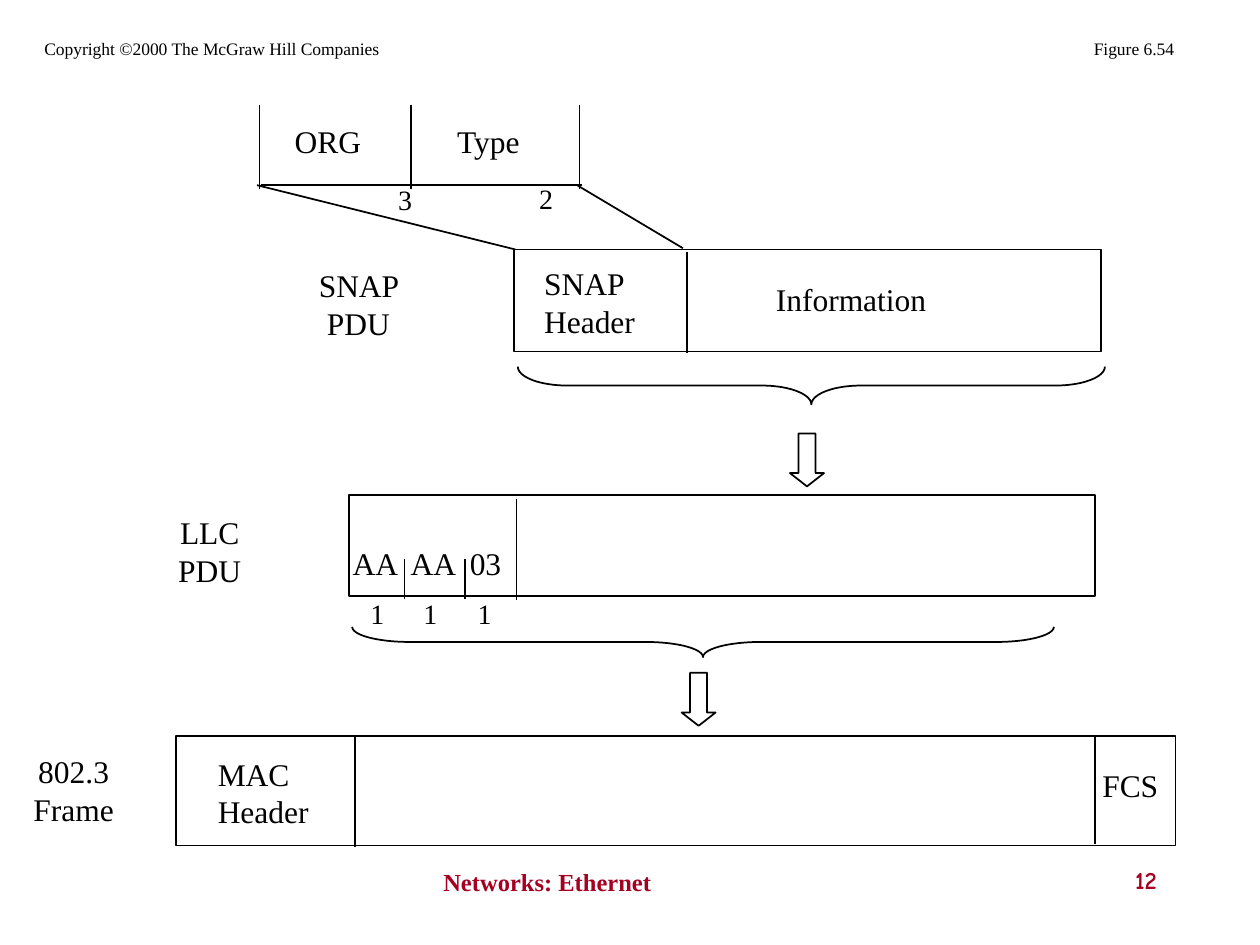
from pptx import Presentation
from pptx.dml.color import RGBColor
from pptx.enum.shapes import MSO_CONNECTOR, MSO_SHAPE
from pptx.enum.text import MSO_ANCHOR, PP_ALIGN
from pptx.oxml.ns import qn
from pptx.util import Inches, Pt
from lxml import etree

LINE = MSO_CONNECTOR.STRAIGHT
RECT, ARROW, BRACE = MSO_SHAPE.RECTANGLE, MSO_SHAPE.DOWN_ARROW, MSO_SHAPE.LEFT_BRACE
TOP, MID = MSO_ANCHOR.TOP, MSO_ANCHOR.MIDDLE
LEFT, MIDDLE, RIGHT = PP_ALIGN.LEFT, PP_ALIGN.CENTER, PP_ALIGN.RIGHT
COLORS = {"ink": "000000", "paper": "FFFFFF", "accent": "A50021"}
SERIF, COMIC = "Times New Roman", "Comic Neue"

deck = Presentation()
deck.slide_width, deck.slide_height = Inches(10), Inches(7.5)
slide = deck.slides.add_slide(deck.slide_layouts[6])
shapes = slide.shapes
UNIT = deck.slide_width / 100  # grid of 100 columns by 75 rows


def grid(*cells):
    return [round(cell * UNIT) for cell in cells]


def write(text, *cells, size=18, font=SERIF, color="ink", bold=False,
          align=LEFT, anchor=TOP, wrap=True, tabs=()):
    """Put text in a box; cells are left, top, width, height, and tabs are stops from its inset."""
    frame = shapes.add_textbox(*grid(*cells)).text_frame
    frame.word_wrap, frame.vertical_anchor = wrap, anchor
    para = frame.paragraphs[0]
    para.alignment = align
    if tabs:
        stops = etree.SubElement(para._p.get_or_add_pPr(), qn("a:tabLst"))
        for stop in grid(*tabs):
            etree.SubElement(stops, qn("a:tab"), pos=str(stop), algn="l")
    run = para.add_run()
    run.text = text
    run.font.name, run.font.size, run.font.bold = font, Pt(size), bold
    run.font.color.rgb = RGBColor.from_string(COLORS[color])


# Frames, arrows and braces: kind, cells, rotation, first adjustment
outlines = [
    (RECT, (14, 58.4, 79.3, 8.7), 0, None),
    (RECT, (27.7, 39.3, 59.2, 8), 0, None),
    (RECT, (40.8, 19.8, 46.6, 8.1), 0, None),
    (ARROW, (62.7, 34.4, 2.7, 4.2), 0, 0.5),
    (ARROW, (54.1, 53.4, 2.7, 4.2), 0, 0.5),
    (BRACE, (54.6, 23.1, 2.4, 55.7), 270, 1.9),
    (BRACE, (62.9, 7.3, 3, 46.6), 270, 1.31),
]
for kind, cells, turn, bend in outlines:
    shape = shapes.add_shape(kind, *grid(*cells))
    shape.shadow.inherit = False
    shape.rotation = turn
    shape.line.color.rgb = RGBColor.from_string(COLORS["ink"])
    shape.line.width = Pt(1)
    if kind == ARROW:
        shape.fill.solid()
        shape.fill.fore_color.rgb = RGBColor.from_string(COLORS["paper"])
        shape.adjustments[1] = 0.39
    else:
        shape.fill.background()
    if bend:
        shape.adjustments[0] = bend

# Upright dividers: column, top, bottom
posts = [
    (28.2, 58.5, 67.2), (86.9, 58.5, 67),
    (41, 39.6, 47.6), (32.1, 44.4, 47.5), (36.9, 44.4, 47.5),
    (54.5, 20, 28),
    *((col, 8.3, 15) for col in (20.6, 32.6, 46)),
]
# Base of the top fields, and the rays from it to the header below
rays = [(20.7, 14.7, 46.2, 14.7), (20.4, 14.7, 40.9, 19.8), (45.8, 14.7, 54.2, 19.7)]
for ends in [(col, top, col, end) for col, top, end in posts] + rays:
    line = shapes.add_connector(LINE, *grid(*ends))
    line.line.color.rgb = RGBColor.from_string(COLORS["ink"])
    line.line.width = Pt(1)
    etree.SubElement(line._element.spPr, qn("a:effectLst"))

# Names of the units on the left
for name, left, top in [("SNAP PDU", 22.6, 20.6), ("LLC PDU", 10.8, 40.2),
                        ("802.3 Frame", 0, 59.2)]:
    write(name, left, top, 11.7, 7, align=MIDDLE, anchor=MID)

# Field names
write("ORG", 22.4, 9.2, 10.5, 4)
write("Type", 35.3, 9.2, 10.5, 4)
write("SNAP Header", 42.2, 20.5, 9.8, 7)
write("Information", 60.6, 21.7, 16, 4)
write("AA\tAA\t03", 27, 42.7, 17.2, 4, tabs=(4.6, 9.3))
write("MAC Header", 16.3, 59.4, 9.8, 7)
write("FCS", 86.5, 60.3, 8, 4)

# Field lengths in bytes
for count, left, top in [("3", 30.6, 14), ("2", 41.8, 13.9),
                         *(("1", col, 46.8) for col in (28.4, 32.6, 36.9))]:
    write(count, left, top, 3.1, 3.7, size=16, align=MIDDLE, anchor=MID, wrap=False)

# Header and footer
small = {"size": 10, "align": MIDDLE, "anchor": MID, "wrap": False}
write("Copyright ©2000 The McGraw Hill Companies", 2.4, 2.5, 28.8, 2.7, **small)
write("Figure 6.54", 85.8, 2.5, 8.4, 2.7, **small)
foot = {"size": 14, "color": "accent", "bold": True}
write("Networks: Ethernet", 34.2, 68.3, 31.7, 5, **foot)
write("12", 72, 68.2, 20.8, 5, font=COMIC, align=RIGHT, **foot)

deck.save("out.pptx")
